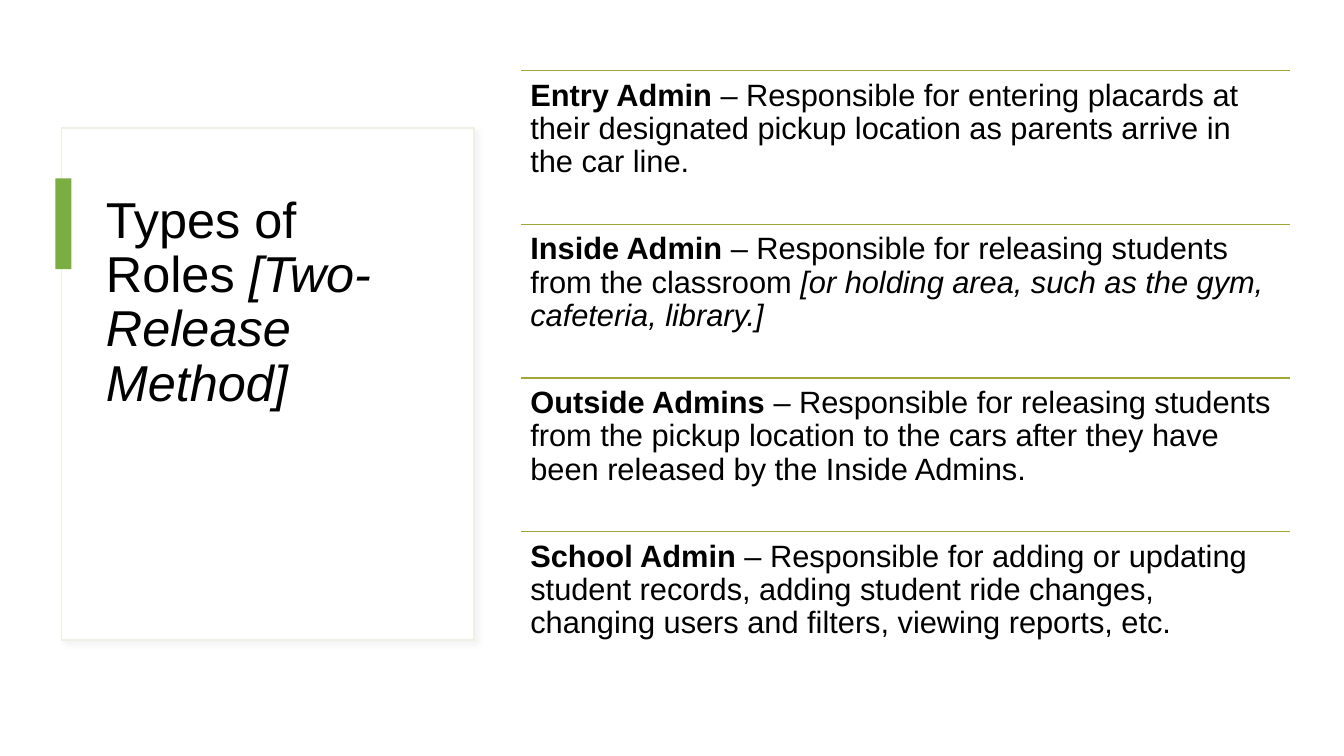
from dataclasses import dataclass

from lxml.etree import SubElement
from pptx import Presentation
from pptx.dml.color import RGBColor
from pptx.enum.shapes import MSO_CONNECTOR, MSO_SHAPE
from pptx.enum.text import MSO_ANCHOR, MSO_AUTO_SIZE, PP_ALIGN
from pptx.oxml.ns import qn
from pptx.util import Inches, Pt

# Content: each text is a list of (words, style) runs
HEADING = [("Types of Roles ", ""), ("[Two-Release Method]", "italic")]
ROLES = [
    [("Entry Admin ", "bold"),
     ("– Responsible for entering placards at their designated pickup location "
      "as parents arrive in the car line.", "")],
    [("Inside Admin ", "bold"),
     ("– Responsible for releasing students from the classroom ", ""),
     ("[or holding area, such as the gym, cafeteria, library.]", "italic")],
    [("Outside Admins ", "bold"),
     ("– Responsible for releasing students from the pickup location to the cars "
      "after they have been released by the Inside Admins.", "")],
    [("School Admin ", "bold"),
     ("– Responsible for adding or updating student records, adding student ride "
      "changes, changing users and filters, viewing reports, etc.", "")],
]


@dataclass(frozen=True)
class Theme:
    font: str = "Arial"
    heading_size: int = 36
    role_size: int = 22
    text: str = "000000"
    card: str = "FFFFFF"
    card_edge: str = "EFEFE3"
    shadow: str = "D9D9D9"
    accent: str = "7BAE41"
    rule: str = "A1A737"


THEME = Theme()

# Layout in inches: left, top, width, height
SLIDE_W, SLIDE_H = 13.33, 7.5
CARD = (0.61, 1.27, 4.09, 5.08)
HEADING_BOX = (0.95, 1.88, 3.39, 3.85)
ACCENT_BAR = (0.55, 1.77, 0.16, 0.9)
ROLES_LEFT, ROLES_TOP, ROLES_W, ROLES_H = 5.17, 0.7, 7.62, 6.1
ROLE_PAD = 0.09


def color(code):
    return RGBColor.from_string(code)


def box(left, top, width, height):
    return [Inches(v) for v in (left, top, width, height)]


def write(frame, runs, size):
    frame.word_wrap = True
    frame.auto_size = MSO_AUTO_SIZE.NONE
    frame.vertical_anchor = MSO_ANCHOR.TOP
    paragraph = frame.paragraphs[0]
    paragraph.alignment = PP_ALIGN.LEFT
    paragraph.line_spacing = 0.9
    for words, style in runs:
        run = paragraph.add_run()
        run.text = words
        run.font.name = THEME.font
        run.font.size = Pt(size)
        run.font.color.rgb = color(THEME.text)
        run.font.bold = style == "bold"
        run.font.italic = style == "italic"


def add_panel(shapes, place, fill):
    panel = shapes.add_shape(MSO_SHAPE.RECTANGLE, *box(*place))
    panel.shadow.inherit = False
    panel.fill.solid()
    panel.fill.fore_color.rgb = color(fill)
    panel.line.fill.background()
    return panel


def add_soft_shadow(panel):
    effects = panel._element.spPr.find(qn("a:effectLst"))
    shadow = SubElement(effects, qn("a:outerShdw"), blurRad=str(Pt(4)),
                        dist=str(Pt(3)), dir=str(45 * 60000),
                        algn="tl", rotWithShape="0")
    tint = SubElement(shadow, qn("a:srgbClr"), val=THEME.shadow)
    SubElement(tint, qn("a:alpha"), val="30000")


def add_role(shapes, runs, top, height):
    # Rule above the role
    rule = shapes.add_connector(MSO_CONNECTOR.STRAIGHT, Inches(ROLES_LEFT), Inches(top),
                                Inches(ROLES_LEFT + ROLES_W), Inches(top))
    rule.line.color.rgb = color(THEME.rule)
    rule.line.width = Pt(1)
    SubElement(rule._element.spPr, qn("a:effectLst"))
    # Role name and duty
    role = shapes.add_textbox(*box(ROLES_LEFT, top, ROLES_W, height))
    frame = role.text_frame
    frame.margin_left = frame.margin_right = Inches(ROLE_PAD)
    frame.margin_top = frame.margin_bottom = Inches(ROLE_PAD)
    write(frame, runs, THEME.role_size)


def main():
    deck = Presentation()
    deck.slide_width, deck.slide_height = Inches(SLIDE_W), Inches(SLIDE_H)
    slide = deck.slides.add_slide(deck.slide_layouts[5])
    shapes = slide.shapes

    # Heading on its card, with the accent bar
    heading = shapes.title
    heading.left, heading.top, heading.width, heading.height = box(*HEADING_BOX)
    write(heading.text_frame, HEADING, THEME.heading_size)
    card = add_panel(shapes, CARD, THEME.card)
    card.line.color.rgb = color(THEME.card_edge)
    card.line.width = Pt(1)
    add_soft_shadow(card)
    heading._element.addprevious(card._element)
    add_panel(shapes, ACCENT_BAR, THEME.accent)

    # Roles in equal rows
    row_height = ROLES_H / len(ROLES)
    for row, runs in enumerate(ROLES):
        add_role(shapes, runs, ROLES_TOP + row * row_height, row_height)

    deck.save("out.pptx")


if __name__ == "__main__":
    main()
